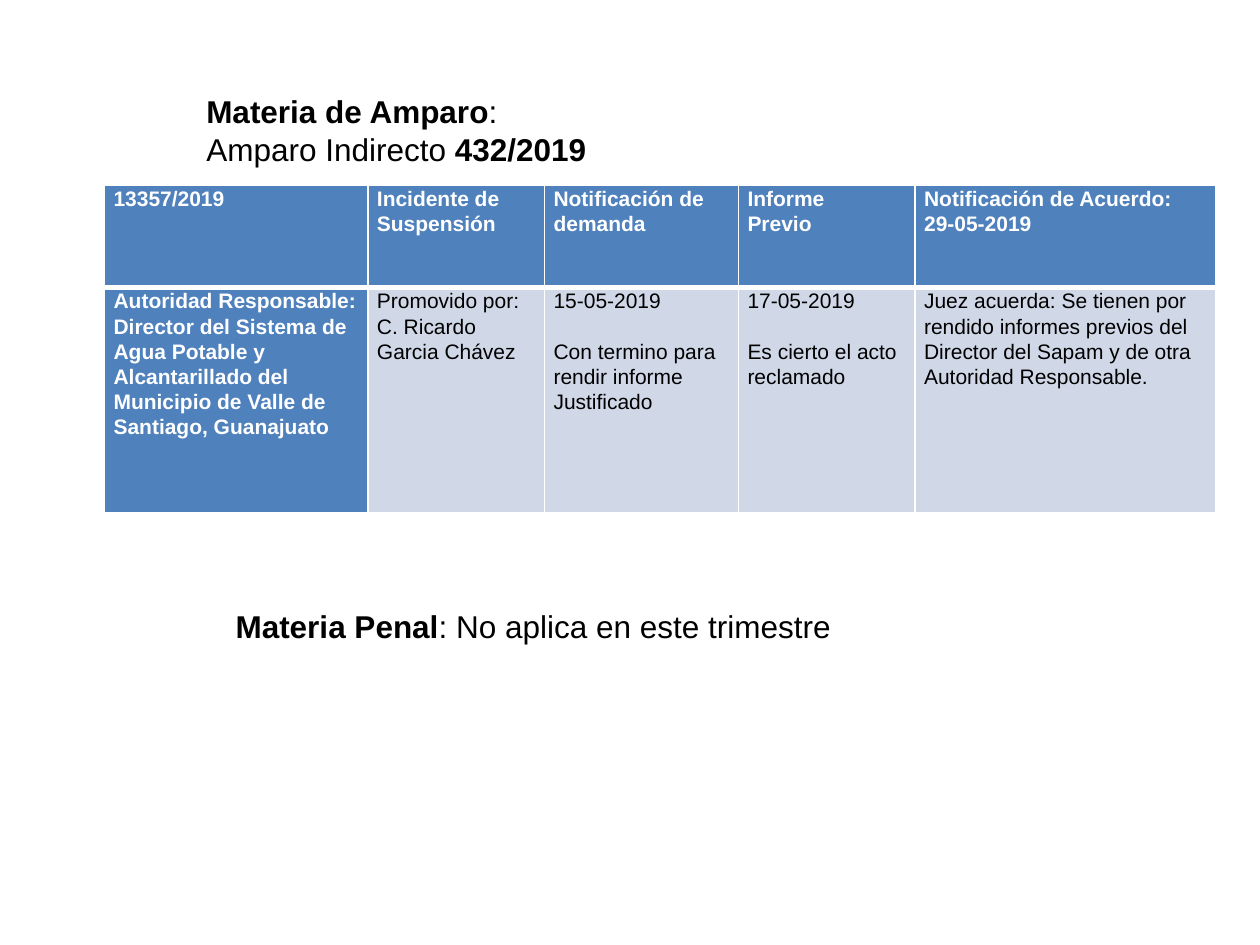
from lxml import etree
from pptx import Presentation
from pptx.dml.color import RGBColor
from pptx.enum.text import PP_ALIGN as ALIGN
from pptx.oxml.ns import qn
from pptx.util import Cm, Pt

COLORS = {"head": "4F81BD", "body": "D0D8E8", "white": "FFFFFF", "black": "000000"}
FONT = "Arial"
COL_WIDTHS = [5.31, 3.56, 3.91, 3.56, 6.05]
ROW_HEIGHTS = [2.06, 4.55]
LINE_GAP = Pt(14.4)

# Each cell is a list of paragraphs
ROWS = [
    [
        ["13357/2019"],
        ["Incidente de Suspensión"],
        ["Notificación de demanda"],
        ["Informe", "Previo"],
        ["Notificación de Acuerdo:", "29-05-2019"],
    ],
    [
        ["Autoridad Responsable:",
         "Director del Sistema de Agua Potable y Alcantarillado del "
         "Municipio de Valle de Santiago, Guanajuato"],
        ["Promovido por:", "C. Ricardo Garcia Chávez"],
        ["15-05-2019", "Con termino para rendir informe Justificado"],
        ["17-05-2019", "Es cierto el acto reclamado"],
        ["Juez acuerda: Se tienen por rendido informes previos del "
         "Director del Sapam y de otra Autoridad Responsable."],
    ],
]
SPACED_CELLS = {(1, 2), (1, 3)}
JUSTIFIED_CELLS = {(0, 4)}


def style_run(r, size, color, bold):
    r.font.name = FONT
    r.font.size = Pt(size)
    r.font.bold = bold
    r.font.color.rgb = RGBColor.from_string(COLORS[color])


def set_borders(cell, bottom):
    tc_pr = cell._tc.get_or_add_tcPr()
    widths = {"lnL": 1, "lnR": 1, "lnT": 1, "lnB": bottom}
    for i, (tag, width) in enumerate(widths.items()):
        ln = etree.Element(qn(f"a:{tag}"), w=str(Pt(width)))
        fill = etree.SubElement(ln, qn("a:solidFill"))
        etree.SubElement(fill, qn("a:srgbClr"), val=COLORS["white"])
        tc_pr.insert(i, ln)


def fill_cell(cell, lines, is_head, spaced, justified):
    cell.margin_left = cell.margin_right = Cm(0.18)
    cell.margin_top, cell.margin_bottom = Cm(0.02), 0
    cell.fill.solid()
    cell.fill.fore_color.rgb = RGBColor.from_string(COLORS["head" if is_head else "body"])
    tf = cell.text_frame
    tf.text = "\n".join(lines)
    for i, p in enumerate(tf.paragraphs):
        p.line_spacing = 1.07
        if justified:
            p.alignment = ALIGN.JUSTIFY
        if spaced and i:
            p.space_before = LINE_GAP
        for r in p.runs:
            style_run(r, 12, "white" if is_head else "black", is_head)


def add_case_table(s, x, y):
    frame = s.shapes.add_table(len(ROWS), len(COL_WIDTHS), Cm(x), Cm(y),
                               Cm(sum(COL_WIDTHS)), Cm(sum(ROW_HEIGHTS)))
    table = frame.table
    table.first_col = True
    table.horz_banding = False
    for col, width in zip(table.columns, COL_WIDTHS):
        col.width = Cm(width)
    for row, height in zip(table.rows, ROW_HEIGHTS):
        row.height = Cm(height)
    for i, row in enumerate(ROWS):
        for j, lines in enumerate(row):
            cell = table.cell(i, j)
            fill_cell(cell, lines, i == 0 or j == 0,
                      (i, j) in SPACED_CELLS, (i, j) in JUSTIFIED_CELLS)
            set_borders(cell, 3 if i == 0 else 1)
    # The lower row shares the heavy rule under the header
    for cell in table.rows[1].cells:
        cell._tc.tcPr.find(qn("a:lnT")).set("w", str(Pt(3)))


def add_heading(s, x, y, w, h, paragraphs):
    """Each paragraph is a list of (text, bold) pairs."""
    tf = s.shapes.add_textbox(Cm(x), Cm(y), Cm(w), Cm(h)).text_frame
    tf.word_wrap = True
    for i, parts in enumerate(paragraphs):
        p = tf.add_paragraph() if i else tf.paragraphs[0]
        p.alignment = ALIGN.JUSTIFY
        for text, bold in parts:
            r = p.add_run()
            r.text = text
            style_run(r, 18, "black", bold)


def main():
    prs = Presentation()
    prs.slide_width, prs.slide_height = Cm(25.4), Cm(19.05)
    s = prs.slides.add_slide(prs.slide_layouts[6])

    # Case table
    add_case_table(s, 2.11, 3.73)

    # Headings above and below the table
    add_heading(s, 3.91, 1.73, 17.6, 1.8, [
        [("Materia de Amparo", True), (":", False)],
        [("Amparo Indirecto ", False), ("432/2019", True)],
    ])
    add_heading(s, 4.5, 12.12, 12.7, 1.8, [
        [("Materia Penal", True), (": No aplica en este trimestre", False)],
    ])

    prs.save("out.pptx")


if __name__ == "__main__":
    main()
